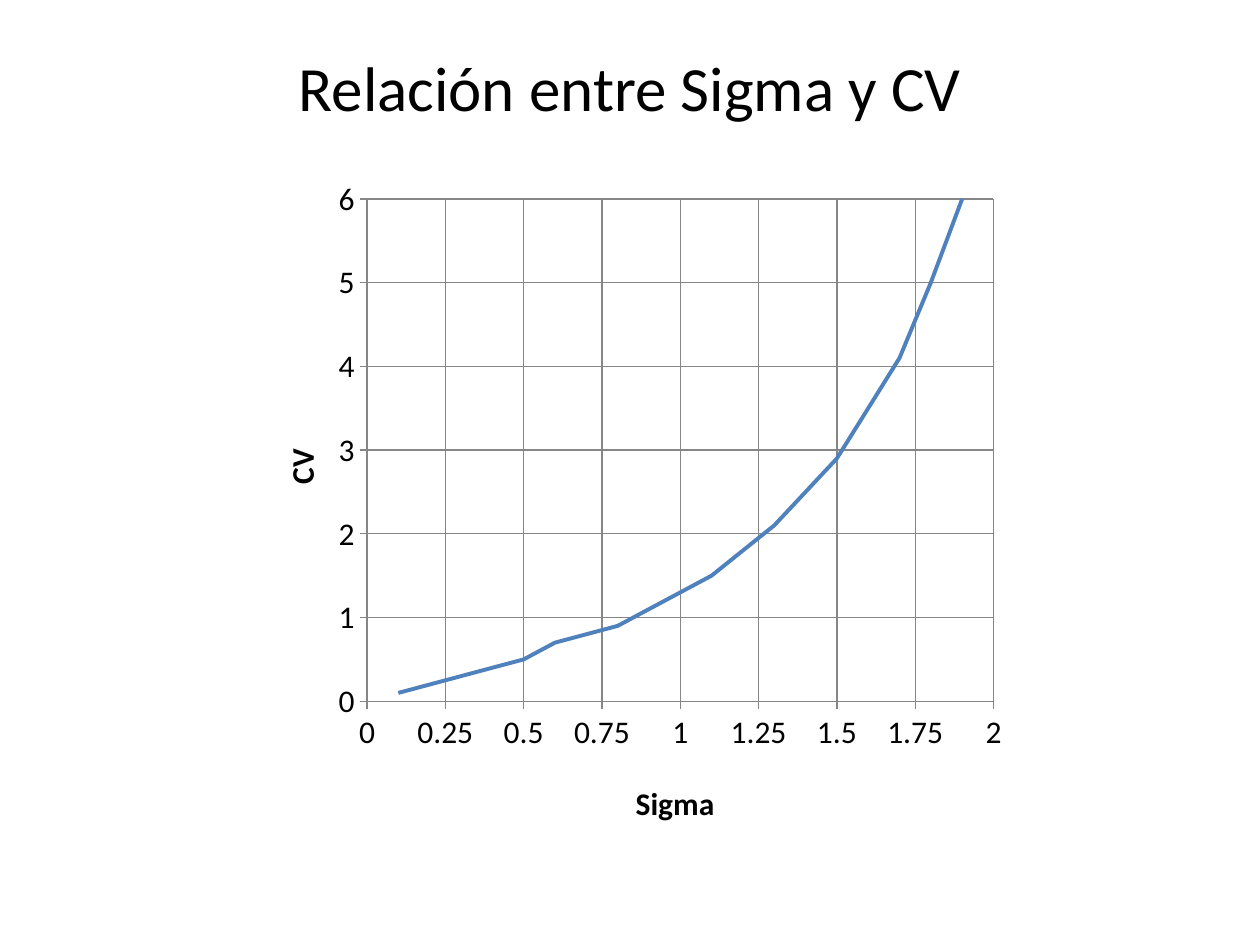
import math

import pptx
import pptx.chart.data
import pptx.dml.color
import pptx.enum.chart
import pptx.enum.text
import pptx.oxml
import pptx.oxml.ns
import pptx.util

Pt = pptx.util.Pt
COLORS = {"text": "000000", "curve": "4F81BD", "grid": "868686"}


def rgb(name):
    return pptx.dml.color.RGBColor.from_string(COLORS[name])


def set_layout(parent, index, inner=False, **fractions):
    """Place a chart part at fractions of the chart's size."""
    for old in parent.findall(pptx.oxml.ns.qn("c:layout")):
        parent.remove(old)
    settings = {"layoutTarget": "inner"} if inner else {}
    settings.update(xMode="edge", yMode="edge", **fractions)
    items = "".join(f'<c:{key} val="{value}"/>' for key, value in settings.items())
    parent.insert(index, pptx.oxml.parse_xml(
        f'<c:layout {pptx.oxml.ns.nsdecls("c")}>'
        f"<c:manualLayout>{items}</c:manualLayout></c:layout>"))


class SlideBuilder:
    font_name = "Calibri"

    def __init__(self, slide):
        self.slide = slide

    def style_font(self, font, size, bold=False):
        font.name = self.font_name
        font.size = Pt(size)
        font.bold = bold
        font.color.rgb = rgb("text")

    def heading(self, text, left, top, width, height):
        heading = self.slide.shapes.add_textbox(Pt(left), Pt(top), Pt(width), Pt(height))
        frame = heading.text_frame
        frame.word_wrap = True
        frame.vertical_anchor = pptx.enum.text.MSO_ANCHOR.MIDDLE
        paragraph = frame.paragraphs[0]
        paragraph.text = text
        paragraph.alignment = pptx.enum.text.PP_ALIGN.CENTER
        self.style_font(paragraph.font, 36)

    def axis(self, axis, title, maximum, step, number_format, title_x, title_y):
        axis.minimum_scale, axis.maximum_scale, axis.major_unit = 0, maximum, step
        axis.has_major_gridlines = True
        axis.major_tick_mark = pptx.enum.chart.XL_TICK_MARK.OUTSIDE
        axis.minor_tick_mark = pptx.enum.chart.XL_TICK_MARK.NONE
        axis.tick_labels.number_format = number_format
        axis.tick_labels.number_format_is_linked = False
        for line in (axis.format.line, axis.major_gridlines.format.line):
            line.color.rgb = rgb("grid")
            line.width = Pt(0.75)
        paragraph = axis.axis_title.text_frame.paragraphs[0]
        paragraph.text = title
        self.style_font(paragraph.font, 18, bold=True)
        set_layout(axis.axis_title._element, 1, x=title_x, y=title_y)

    def curve_chart(self, points, left, top, width, height):
        data = pptx.chart.data.XyChartData()
        curve_data = data.add_series("Series 1")
        for x, y in points:
            curve_data.add_data_point(x, y)
        chart = self.slide.shapes.add_chart(
            pptx.enum.chart.XL_CHART_TYPE.XY_SCATTER_SMOOTH_NO_MARKERS,
            Pt(left), Pt(top), Pt(width), Pt(height), data).chart
        chart.has_legend = False
        chart.has_title = False
        self.style_font(chart.font, 18)
        plot = chart.plots[0]
        plot.vary_by_categories = False
        curve = plot.series[0]
        curve.smooth = True
        curve.marker.style = pptx.enum.chart.XL_MARKER_STYLE.NONE
        curve.format.line.color.rgb = rgb("curve")
        curve.format.line.width = Pt(2.25)
        plot_area = chart._chartSpace.chart.plotArea
        set_layout(plot_area, 0, inner=True, x=0.16, y=0.05, w=0.81, h=0.74)
        return chart


def main():
    presentation = pptx.Presentation()
    presentation.slide_width, presentation.slide_height = Pt(720), Pt(540)
    builder = SlideBuilder(presentation.slides.add_slide(presentation.slide_layouts[6]))

    builder.heading("Relación entre Sigma y CV", 36, 21.6, 648, 55.4)
    sigmas = [step / 10 for step in range(1, 21)]
    # CV of a lognormal variable
    points = [(sigma, round(math.sqrt(math.exp(sigma ** 2) - 1), 1)) for sigma in sigmas]
    chart = builder.curve_chart(points, 139, 94.3, 442, 388)
    builder.axis(chart.category_axis, "Sigma", 2, 0.25, "General", 0.5, 0.9)
    builder.axis(chart.value_axis, "CV", 6, 1, "0", 0.04, 0.41)

    presentation.save("out.pptx")


if __name__ == "__main__":
    main()
